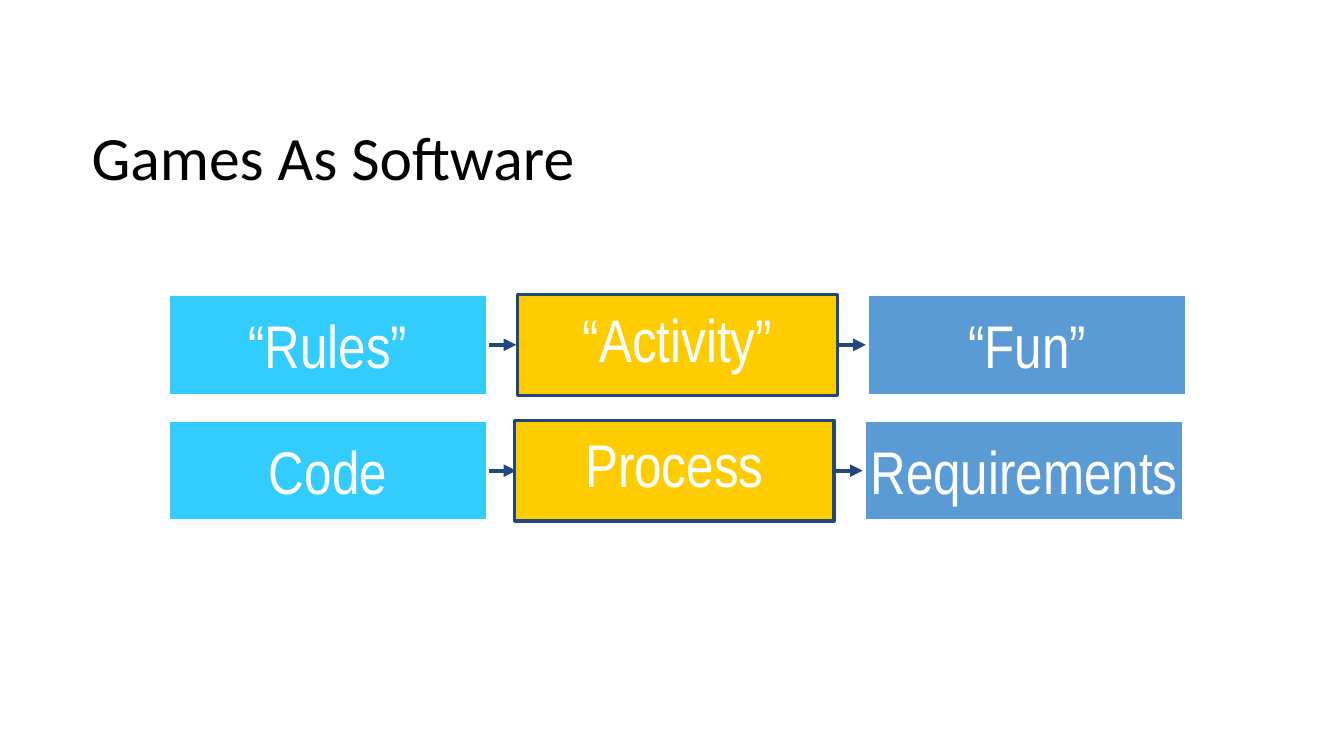
from lxml.etree import SubElement
from pptx import Presentation
from pptx.dml.color import RGBColor
from pptx.enum.shapes import MSO_CONNECTOR, MSO_SHAPE
from pptx.enum.text import MSO_ANCHOR, PP_ALIGN
from pptx.oxml.ns import qn
from pptx.util import Cm, Pt

BLACK = RGBColor(0x00, 0x00, 0x00)
WHITE = RGBColor(0xFF, 0xFF, 0xFF)
CYAN = RGBColor(0x33, 0xCC, 0xFF)
GOLD = RGBColor(0xFF, 0xCC, 0x00)
BLUE = RGBColor(0x5B, 0x9B, 0xD5)
NAVY = RGBColor(0x1F, 0x49, 0x7D)

# Fill, outline and line spacing of each column
STYLES = [(CYAN, WHITE, 1.0), (GOLD, NAVY, 0.8), (BLUE, WHITE, 1.0)]
# Top, left shift of the later columns, and labels of each row, in cm
ROWS = [
    (7.42, 0, ["“Rules”", "“Activity”", "“Fun”"]),
    (10.59, -0.08, ["Code", "Process", "Requirements"]),
]
LEFT, WIDTH, HEIGHT, PITCH = 4.24, 8.05, 2.54, 8.81
GAP, REACH = 0.03, 0.69


def set_text(frame, text, font, size, color, align, spacing):
    frame.margin_left = frame.margin_right = Cm(0.33)
    frame.margin_top = frame.margin_bottom = Cm(0.18)
    frame.text = text
    line = frame.paragraphs[0]
    line.alignment = align
    line.line_spacing = spacing
    line.font.name = font
    line.font.size = Pt(size)
    line.font.color.rgb = color


def add_title(slide, text, left, top, width, height):
    title = slide.shapes.title
    title.left, title.top = Cm(left), Cm(top)
    title.width, title.height = Cm(width), Cm(height)
    frame = title.text_frame
    frame.vertical_anchor = MSO_ANCHOR.TOP
    set_text(frame, text, "Calibri", 44, BLACK, PP_ALIGN.LEFT, 0.9)


def add_box(slide, text, style, left, top):
    fill, edge, spacing = style
    box = slide.shapes.add_shape(
        MSO_SHAPE.RECTANGLE, Cm(left), Cm(top), Cm(WIDTH), Cm(HEIGHT))
    box.shadow.inherit = False
    box.fill.solid()
    box.fill.fore_color.rgb = fill
    box.line.color.rgb = edge
    box.line.width = Pt(2.25)
    frame = box.text_frame
    frame.word_wrap = False
    frame.vertical_anchor = MSO_ANCHOR.MIDDLE
    set_text(frame, text, "Arial Narrow", 43, WHITE, PP_ALIGN.CENTER, spacing)


def add_arrow(slide, left, y):
    arrow = slide.shapes.add_connector(
        MSO_CONNECTOR.STRAIGHT, Cm(left), Cm(y), Cm(left + REACH), Cm(y))
    arrow.line.color.rgb = NAVY
    arrow.line.width = Pt(3)
    SubElement(arrow.line._get_or_add_ln(), qn("a:tailEnd"), type="triangle")
    SubElement(arrow._element.spPr, qn("a:effectLst"))


def add_row(slide, top, shift, labels):
    lefts = [LEFT + i * PITCH + (shift if i else 0) for i in range(len(labels))]
    for label, style, left in zip(labels, STYLES, lefts):
        add_box(slide, label, style, left, top)
    # An arrow leaves every box but the last
    for left in lefts[:-1]:
        add_arrow(slide, left + WIDTH + GAP, top + HEIGHT / 2)


def main():
    deck = Presentation()
    deck.slide_width, deck.slide_height = Cm(33.87), Cm(19.05)
    slide = deck.slides.add_slide(deck.slide_layouts[5])
    # Heading
    add_title(slide, "Games As Software", 1.98, 3.02, 29.9, 4.01)
    # Game terms above their software counterparts
    for top, shift, labels in ROWS:
        add_row(slide, top, shift, labels)
    deck.save("out.pptx")


if __name__ == "__main__":
    main()
